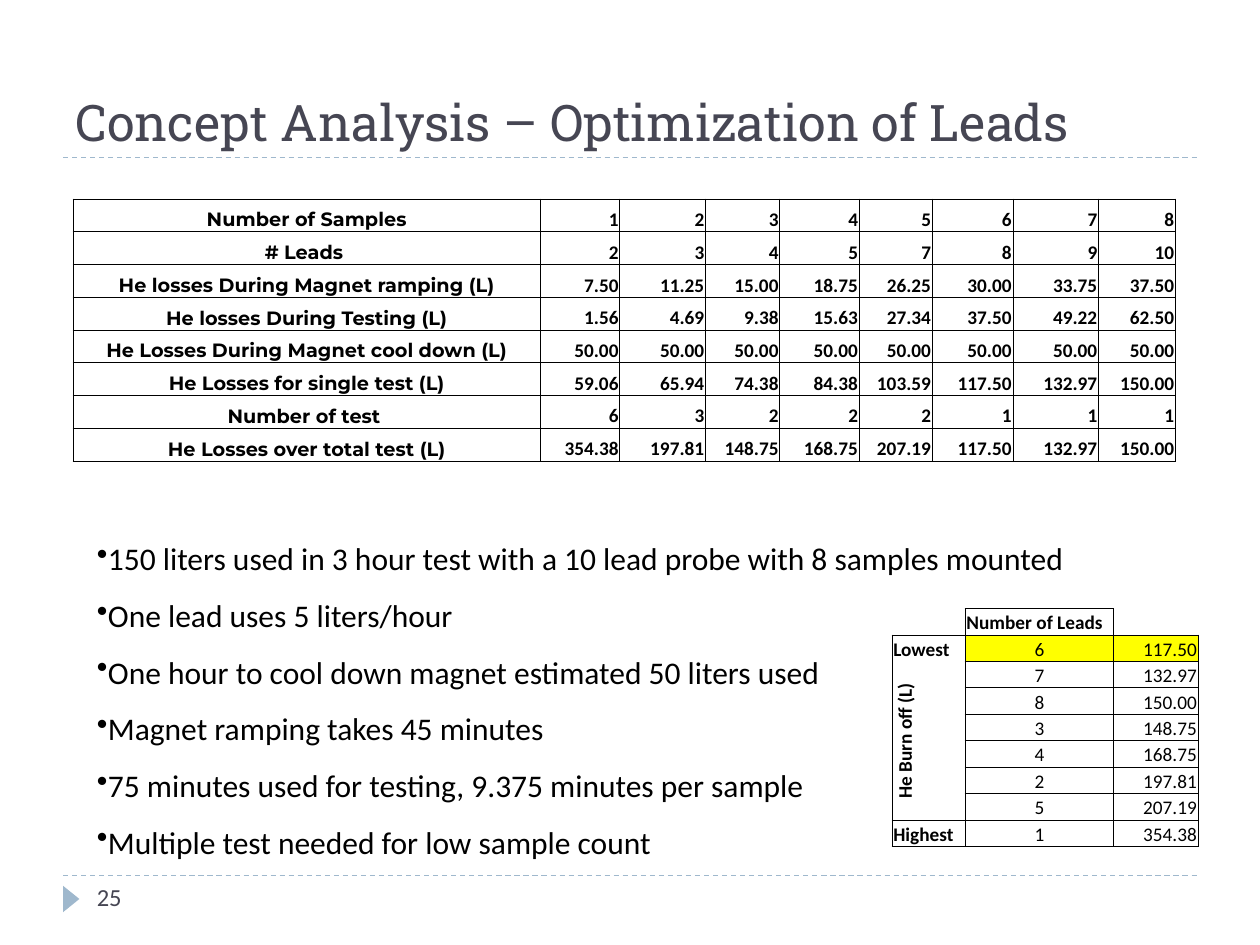
from dataclasses import dataclass
from typing import Optional

from lxml.etree import SubElement
from pptx import Presentation
from pptx.dml.color import RGBColor
from pptx.enum.dml import MSO_LINE
from pptx.enum.shapes import MSO_CONNECTOR, MSO_SHAPE
from pptx.enum.text import MSO_ANCHOR, MSO_AUTO_SIZE, PP_ALIGN
from pptx.oxml.ns import qn
from pptx.util import Inches, Pt


@dataclass(frozen=True)
class Theme:
    ink: str = "000000"
    heading: str = "464653"
    accent: str = "9FB8CD"
    highlight: str = "FFFF00"
    paper: str = "FFFFFF"
    heading_font: str = "Roboto Slab"
    label_font: str = "Montserrat"
    body_font: str = "Calibri"
    title_size: float = 28.8
    body_size: float = 18
    number_size: float = 14
    table_size: float = 11
    rule_width: float = 0.75
    border_width: float = 0.5


@dataclass(frozen=True)
class CellSpec:
    text: str = ""
    align: PP_ALIGN = PP_ALIGN.LEFT
    font: str = "Calibri"
    bold: bool = False
    fill: Optional[str] = None
    sides: str = "LRTB"


@dataclass(frozen=True)
class TableSpec:
    left: float
    top: float
    columns: tuple[float, ...]
    row_height: float
    rows: list[list[CellSpec]]


THEME = Theme()

LOSSES = [
    ("Number of Samples", "1 2 3 4 5 6 7 8"),
    ("# Leads ", "2 3 4 5 7 8 9 10"),
    ("He losses During Magnet ramping (L)", "7.50 11.25 15.00 18.75 26.25 30.00 33.75 37.50"),
    ("He losses During Testing (L)", "1.56 4.69 9.38 15.63 27.34 37.50 49.22 62.50"),
    ("He Losses During Magnet cool down (L)", "50.00 50.00 50.00 50.00 50.00 50.00 50.00 50.00"),
    ("He Losses for single test (L)", "59.06 65.94 74.38 84.38 103.59 117.50 132.97 150.00"),
    ("Number of test ", "6 3 2 2 2 1 1 1"),
    ("He Losses over total test (L)", "354.38 197.81 148.75 168.75 207.19 117.50 132.97 150.00"),
]

RANKING = [
    ("6", "117.50"), ("7", "132.97"), ("8", "150.00"), ("3", "148.75"),
    ("4", "168.75"), ("2", "197.81"), ("5", "207.19"), ("1", "354.38"),
]

FINDINGS = [
    "150 liters used in 3 hour test with a 10 lead probe with 8 samples mounted",
    "One lead uses 5 liters/hour",
    "One hour to cool down magnet estimated 50 liters used",
    "Magnet ramping takes 45 minutes",
    "75 minutes used for testing, 9.375 minutes per sample",
    "Multiple test needed for low sample count",
]


def add_span(para, text: str, size: float, color: str, font: str, bold: bool = False) -> None:
    span = para.add_run()
    span.text = text
    span.font.size = Pt(size)
    span.font.name = font
    span.font.bold = bold
    span.font.color.rgb = RGBColor.from_string(color)


def add_rule(page, y: float) -> None:
    rule = page.shapes.add_connector(
        MSO_CONNECTOR.STRAIGHT, Inches(0.5), Inches(y), Inches(9.5), Inches(y))
    rule.line.color.rgb = RGBColor.from_string(THEME.accent)
    rule.line.width = Pt(THEME.rule_width)
    rule.line.dash_style = MSO_LINE.DASH
    SubElement(rule.element.spPr, qn("a:effectLst"))


def add_marker(page) -> None:
    marker = page.shapes.add_shape(
        MSO_SHAPE.ISOSCELES_TRIANGLE, Inches(0.46), Inches(7.07), Inches(0.21), Inches(0.13))
    marker.rotation = 90
    marker.shadow.inherit = False
    marker.fill.solid()
    marker.fill.fore_color.rgb = RGBColor.from_string(THEME.accent)
    marker.line.fill.background()


def set_title(page, text: str) -> None:
    title = page.shapes.title
    title.left, title.top = Inches(0.5), Inches(0.17)
    title.width, title.height = Inches(9), Inches(1.08)
    frame = title.text_frame
    frame.auto_size = MSO_AUTO_SIZE.NONE
    frame.vertical_anchor = MSO_ANCHOR.BOTTOM
    para = frame.paragraphs[0]
    para.alignment = PP_ALIGN.LEFT
    add_span(para, text, THEME.title_size, THEME.heading, THEME.heading_font)


def add_text_box(page, left: float, top: float, width: float, height: float):
    box = page.shapes.add_textbox(Inches(left), Inches(top), Inches(width), Inches(height))
    box.text_frame.word_wrap = True
    return box.text_frame


def add_findings(page) -> None:
    frame = add_text_box(page, 0.67, 4.08, 8.17, 2.77)
    for index, finding in enumerate(FINDINGS):
        para = frame.add_paragraph() if index else frame.paragraphs[0]
        para.line_spacing = 1.5
        SubElement(para._p.get_or_add_pPr(), qn("a:buChar"), char="•")
        add_span(para, finding, THEME.body_size, THEME.ink, THEME.body_font)


def format_cell(cell, spec: CellSpec) -> None:
    cell.margin_left = cell.margin_right = cell.margin_top = Inches(0.01)
    cell.margin_bottom = 0
    cell.vertical_anchor = MSO_ANCHOR.BOTTOM
    para = cell.text_frame.paragraphs[0]
    para.alignment = spec.align
    if spec.text:
        add_span(para, spec.text, THEME.table_size, THEME.ink, spec.font, spec.bold)
    else:
        SubElement(para._p, qn("a:endParaRPr"), sz=str(THEME.table_size * 100))
    properties = cell._tc.get_or_add_tcPr()
    for side in "LRTB":
        border = SubElement(properties, qn(f"a:ln{side}"), w=str(Pt(THEME.border_width)))
        if side in spec.sides:
            paint = SubElement(border, qn("a:solidFill"))
            SubElement(paint, qn("a:srgbClr"), val=THEME.ink)
        else:
            SubElement(border, qn("a:noFill"))
    if spec.fill:
        cell.fill.solid()
        cell.fill.fore_color.rgb = RGBColor.from_string(spec.fill)
    else:
        cell.fill.background()


def add_grid(page, spec: TableSpec):
    count = len(spec.rows)
    grid = page.shapes.add_table(
        count, len(spec.columns), Inches(spec.left), Inches(spec.top),
        Inches(sum(spec.columns)), Inches(spec.row_height * count)).table
    grid.first_row = grid.horz_banding = False
    for column, width in zip(grid.columns, spec.columns):
        column.width = Inches(width)
    for row, cells in zip(grid.rows, spec.rows):
        row.height = Inches(spec.row_height)
        for cell, cell_spec in zip(row.cells, cells):
            format_cell(cell, cell_spec)
    return grid


def add_losses(page) -> None:
    rows = [
        [CellSpec(label, PP_ALIGN.CENTER, THEME.label_font, True)]
        + [CellSpec(value, PP_ALIGN.RIGHT, bold=True) for value in values.split()]
        for label, values in LOSSES
    ]
    columns = (3.71, 0.63, 0.68, 0.59, 0.63, 0.58, 0.64, 0.68, 0.61)
    add_grid(page, TableSpec(0.58, 1.58, columns, 0.26, rows))


def add_ranking(page) -> None:
    labels = [
        CellSpec("Lowest", bold=True, fill=THEME.paper, sides="LRT"),
        CellSpec("He Burn off (L)", PP_ALIGN.CENTER, bold=True, sides="LRB"),
        *[CellSpec(sides="LR")] * 4,
        CellSpec(sides="LRB"),
        CellSpec("Highest", bold=True),
    ]
    rows = [[CellSpec(sides="RB"), CellSpec("Number of Leads", bold=True), CellSpec(sides="LB")]]
    for index, (label, (leads, loss)) in enumerate(zip(labels, RANKING)):
        fill = None if index else THEME.highlight
        rows.append([label, CellSpec(leads, PP_ALIGN.CENTER, fill=fill),
                     CellSpec(loss, PP_ALIGN.RIGHT, fill=fill)])
    grid = add_grid(page, TableSpec(7.08, 4.83, (0.58, 1.18, 0.67), 0.21, rows))
    burn_off = grid.cell(2, 0)
    burn_off.merge(grid.cell(7, 0))
    burn_off.vertical_anchor = MSO_ANCHOR.MIDDLE
    burn_off._tc.get_or_add_tcPr().set("vert", "vert270")


def main() -> None:
    deck = Presentation()
    deck.slide_width, deck.slide_height = Inches(10), Inches(7.5)
    page = deck.slides.add_slide(deck.slide_layouts[5])
    for y in (6.95, 1.25):
        add_rule(page, y)
    add_marker(page)
    set_title(page, "Concept Analysis – Optimization of Leads")
    add_losses(page)
    add_findings(page)
    add_ranking(page)
    number = add_text_box(page, 0.67, 6.95, 2.17, 0.4)
    add_span(number.paragraphs[0], "25", THEME.number_size, THEME.heading, THEME.body_font)
    deck.save("out.pptx")


if __name__ == "__main__":
    main()
